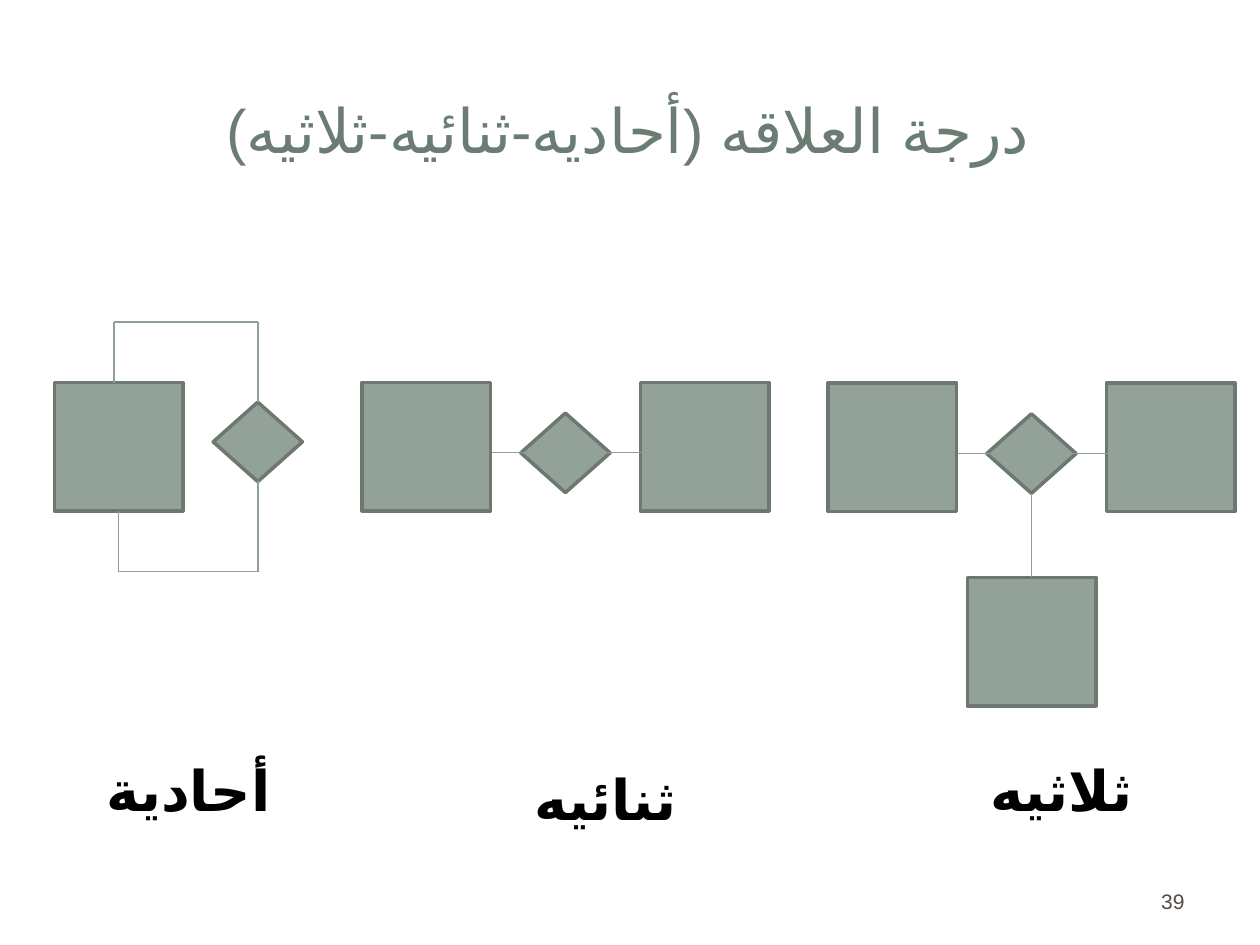
import pptx
from pptx.dml.color import RGBColor
from pptx.enum.lang import MSO_LANGUAGE_ID
from pptx.enum.shapes import MSO_CONNECTOR, MSO_SHAPE
from pptx.enum.text import MSO_ANCHOR, MSO_AUTO_SIZE, PP_ALIGN
from pptx.oxml.ns import qn
from pptx.util import Pt

COLORS = {
    "title": "6B7D72",
    "fill": "93A299",
    "outline": "6D7871",
    "link": "8F9F96",
    "label": "000000",
    "number": "564B3C",
}
SQUARE = 73.5
DIAMOND_WIDTH, DIAMOND_HEIGHT = 51, 45.4


def add_node(kind, left, top, width=SQUARE, height=SQUARE):
    """Add an entity square or a relationship diamond."""
    node = slide.shapes.add_shape(kind, Pt(left), Pt(top), Pt(width), Pt(height))
    node.shadow.inherit = False
    node.fill.solid()
    node.fill.fore_color.rgb = RGBColor.from_string(COLORS["fill"])
    node.line.color.rgb = RGBColor.from_string(COLORS["outline"])
    node.line.width = Pt(2)


def format_text(shape, text, size, font, color, align, bold=False):
    """Fill a shape with one right-to-left paragraph."""
    shape.text_frame.text = text
    shape.text_frame.word_wrap = True
    para = shape.text_frame.paragraphs[0]
    para.alignment = align
    para._p.get_or_add_pPr().set("rtl", "1")
    span = para.runs[0]
    span.font.size = Pt(size)
    span.font.name = font
    span.font.bold = bold
    span.font.language_id = MSO_LANGUAGE_ID.ARABIC
    span.font.color.rgb = RGBColor.from_string(COLORS[color])
    # Arabic letters take the complex-script font
    properties = span._r.get_or_add_rPr()
    properties.append(properties.makeelement(qn("a:cs"), {"typeface": "Arial"}))


deck = pptx.Presentation()
deck.slide_width, deck.slide_height = Pt(720), Pt(540)
slide = deck.slides.add_slide(deck.slide_layouts[5])

title = slide.shapes.title
title.left, title.top, title.width, title.height = Pt(33.8), Pt(32.4), Pt(650.2), Pt(82.1)
format_text(title, "درجة العلاقه (أحاديه-ثنائيه-ثلاثيه)", 35, "TeX Gyre Pagella",
            "title", PP_ALIGN.CENTER)
title.text_frame.vertical_anchor = MSO_ANCHOR.MIDDLE

number = slide.shapes.add_textbox(Pt(516.2), Pt(500.4), Pt(167.8), Pt(28.8))
format_text(number, "39", 12, "TeX Gyre Adventor", "number", PP_ALIGN.RIGHT)
number.text_frame.vertical_anchor = MSO_ANCHOR.MIDDLE

# Unary: one entity looped back to itself through its relationship
add_node(MSO_SHAPE.RECTANGLE, 31, 218.5)
add_node(MSO_SHAPE.DIAMOND, 121.8, 229.8, DIAMOND_WIDTH, DIAMOND_HEIGHT)
links = [
    (67.9, 292, 67.9, 326.7),
    (65.2, 184, 65.2, 218.6),
    (65.2, 184, 147.4, 184),
    (147.4, 184, 147.4, 229.8),
    (67.9, 326.7, 147.4, 326.7),
    (147.4, 275.1, 147.4, 326.7),
]

# Binary and ternary: two entities with the relationship between them
for left, top in [(206.9, 218.5), (473.2, 218.9)]:
    add_node(MSO_SHAPE.RECTANGLE, left, top)
    add_node(MSO_SHAPE.RECTANGLE, left + 159, top)
    add_node(MSO_SHAPE.DIAMOND, left + 90.7, top + 17.6, DIAMOND_WIDTH, DIAMOND_HEIGHT)
    for start in (74, 136):
        links.append((left + start, top + 40.1, left + start + 39.7, top + 40.1))

# Ternary: the third entity hangs below
add_node(MSO_SHAPE.RECTANGLE, 552.8, 329.9)
links.append((589.6, 283, 589.6, 329.9))

for x1, y1, x2, y2 in links:
    link = slide.shapes.add_connector(MSO_CONNECTOR.STRAIGHT, Pt(x1), Pt(y1), Pt(x2), Pt(y2))
    link.line.color.rgb = RGBColor.from_string(COLORS["link"])
    link.line.width = Pt(0.75)
    properties = link._element.spPr
    properties.append(properties.makeelement(qn("a:effectLst"), {}))

for text, left, top in [("أحادية", 31, 428.4), ("ثنائيه", 269.3, 433.4), ("ثلاثيه", 529.9, 428.4)]:
    label = slide.shapes.add_textbox(Pt(left), Pt(top), Pt(153.4), Pt(46))
    format_text(label, text, 32, "Arial", "label", PP_ALIGN.CENTER, bold=True)
    label.text_frame.auto_size = MSO_AUTO_SIZE.SHAPE_TO_FIT_TEXT

deck.save("out.pptx")
